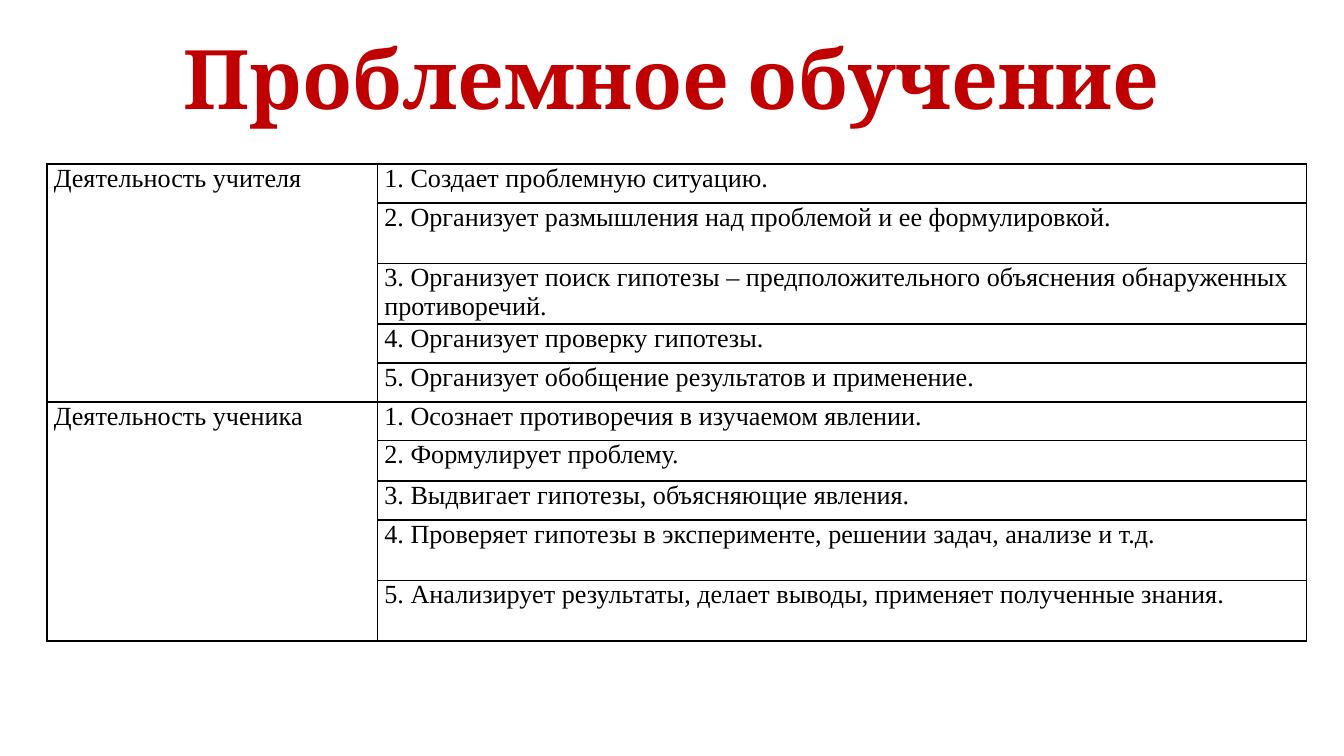
from dataclasses import dataclass

from lxml import etree
from pptx import Presentation
from pptx.dml.color import RGBColor
from pptx.enum import text
from pptx.oxml import ns
from pptx.table import _Cell
from pptx.text.text import TextFrame
from pptx.util import Inches, Pt

COLORS = {"title": "C00000", "ink": "000000"}
TITLE_FONT, TABLE_FONT = "Cambria", "Times New Roman"
SLIDE_WIDTH = Inches(10)
SLIDE_HEIGHT = SLIDE_WIDTH * 9 // 16
SINGLE, DOUBLE = 0.29, 0.45  # row heights
COLUMN_WIDTHS = (2.46, 6.91)


@dataclass(frozen=True)
class Step:
    wording: str
    height: float = SINGLE


@dataclass(frozen=True)
class Role:
    label: str
    steps: tuple[Step, ...]
    align: text.PP_ALIGN = text.PP_ALIGN.LEFT


ROLES = (
    Role("Деятельность учителя", (
        Step("1. Создает проблемную ситуацию."),
        Step("2. Организует размышления над проблемой и ее формулировкой.", DOUBLE),
        Step("3. Организует поиск гипотезы – предположительного объяснения "
             "обнаруженных противоречий.", DOUBLE),
        Step("4. Организует проверку гипотезы."),
        Step("5. Организует обобщение результатов и применение."),
    ), text.PP_ALIGN.JUSTIFY),
    Role("Деятельность ученика", (
        Step("1. Осознает противоречия в изучаемом явлении."),
        Step("2. Формулирует проблему. ", 0.3),
        Step("3. Выдвигает гипотезы, объясняющие явления."),
        Step("4. Проверяет гипотезы в эксперименте, решении задач, анализе и т.д.", DOUBLE),
        Step("5. Анализирует результаты, делает выводы, применяет полученные знания.", DOUBLE),
    )),
)


def write_text(frame: TextFrame, wording: str, *, font: str, size: float, color: str,
               bold: bool = False, align: text.PP_ALIGN = text.PP_ALIGN.LEFT) -> None:
    paragraph = frame.paragraphs[0]
    paragraph.alignment = align
    run = paragraph.add_run()
    run.text = wording
    run.font.name = font
    run.font.size = Pt(size)
    run.font.bold = bold
    run.font.color.rgb = RGBColor.from_string(COLORS[color])


def format_cell(cell: _Cell) -> None:
    """Clear the fill, set the margins and draw a thin border on all four sides."""
    cell.margin_left = cell.margin_right = Inches(0.05)
    cell.margin_top = cell.margin_bottom = 0
    cell.vertical_anchor = text.MSO_ANCHOR.TOP
    cell.fill.background()
    properties = cell._tc.get_or_add_tcPr()
    for position, side in enumerate(("lnL", "lnR", "lnT", "lnB")):
        line = etree.Element(ns.qn(f"a:{side}"), w=str(Pt(1)))
        fill = etree.SubElement(line, ns.qn("a:solidFill"))
        etree.SubElement(fill, ns.qn("a:srgbClr"), val=COLORS["ink"])
        properties.insert(position, line)


def add_roles_table(slide, roles: tuple[Role, ...]) -> None:
    steps = [step for role in roles for step in role.steps]
    table = slide.shapes.add_table(
        len(steps), len(COLUMN_WIDTHS), Inches(0.35), Inches(1.22),
        Inches(sum(COLUMN_WIDTHS)), Inches(sum(step.height for step in steps))).table
    table.first_row = table.horz_banding = False
    for column, width in zip(table.columns, COLUMN_WIDTHS):
        column.width = Inches(width)
    for cell in table.iter_cells():
        format_cell(cell)

    style = {"font": TABLE_FONT, "size": 14, "color": "ink"}
    for index, step in enumerate(steps):
        table.rows[index].height = Inches(step.height)
        write_text(table.cell(index, 1).text_frame, step.wording, **style)
    first = 0
    for role in roles:
        last = first + len(role.steps) - 1
        label = table.cell(first, 0)
        label.merge(table.cell(last, 0))
        write_text(label.text_frame, role.label, align=role.align, **style)
        first = last + 1


def main() -> None:
    presentation = Presentation()
    presentation.slide_width, presentation.slide_height = SLIDE_WIDTH, SLIDE_HEIGHT
    slide = presentation.slides.add_slide(presentation.slide_layouts[5])

    title = slide.shapes.title
    title.left, title.top = Inches(0.5), Inches(0.1)
    title.width, title.height = Inches(9), Inches(0.94)
    title.text_frame.vertical_anchor = text.MSO_ANCHOR.MIDDLE
    write_text(title.text_frame, "Проблемное обучение", font=TITLE_FONT, size=44,
               color="title", bold=True, align=text.PP_ALIGN.CENTER)

    add_roles_table(slide, ROLES)
    presentation.save("out.pptx")


if __name__ == "__main__":
    main()
